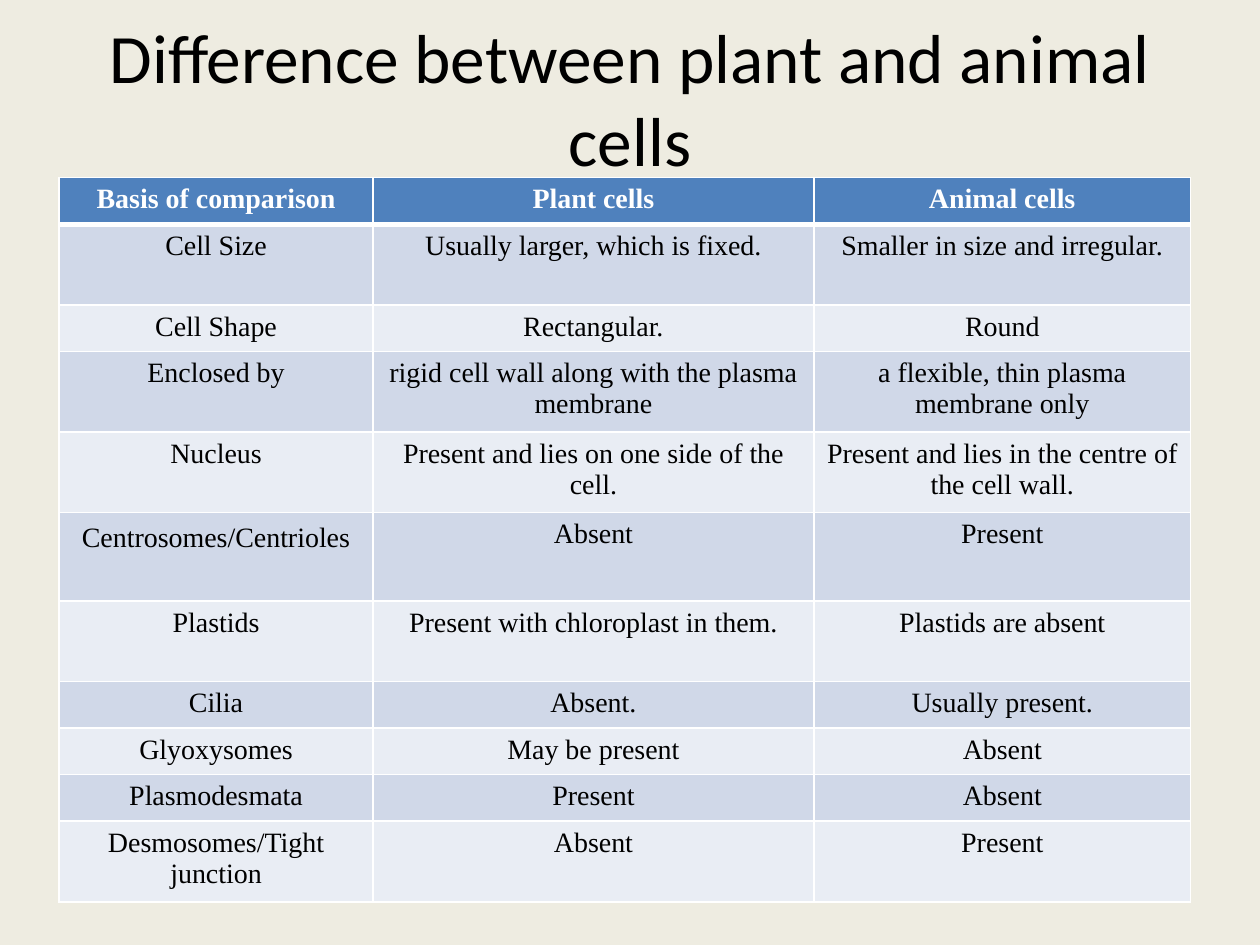
"""Build a slide that compares plant cells and animal cells in a table."""
from dataclasses import dataclass

from lxml.etree import SubElement
from pptx import Presentation
from pptx.dml.color import RGBColor as Color
from pptx.enum.text import MSO_ANCHOR as Anchor, MSO_AUTO_SIZE as AutoSize, PP_ALIGN as Align
from pptx.oxml.ns import qn
from pptx.util import Inches, Pt


@dataclass(frozen=True)
class Theme:
    background: str = "EEECE1"
    header: str = "4F81BD"
    bands: tuple = ("E9EDF4", "D0D8E8")
    white: str = "FFFFFF"
    black: str = "000000"
    title_font: str = "Calibri"
    table_font: str = "Times New Roman"
    title_size: float = 39.6
    table_size: float = 16
    border: float = 1
    header_border: float = 3


theme = Theme()


def write(frame, text, *, font, size, color, bold=False):
    para = frame.paragraphs[0]
    para.alignment = Align.CENTER
    span = para.add_run()
    span.text = text
    span.font.name = font
    span.font.size = Pt(size)
    span.font.bold = bold
    span.font.color.rgb = Color.from_string(color)


def draw_border(cell, side, width):
    properties = cell._tc.get_or_add_tcPr()
    line = SubElement(properties, qn(f"a:ln{side}"), w=str(Pt(width)))
    fill = SubElement(line, qn("a:solidFill"))
    SubElement(fill, qn("a:srgbClr"), val=theme.white)


deck = Presentation()
deck.slide_width, deck.slide_height = Inches(10), Inches(7.5)
page = deck.slides.add_slide(deck.slide_layouts[5])
page.background.fill.solid()
page.background.fill.fore_color.rgb = Color.from_string(theme.background)

title = page.shapes.title
title.left, title.top = Inches(0.5), Inches(0.3)
title.width, title.height = Inches(9), Inches(0.95)
title.text_frame.auto_size = AutoSize.NONE
title.text_frame.vertical_anchor = Anchor.MIDDLE
write(title.text_frame, "Difference between plant and animal cells",
      font=theme.title_font, size=theme.title_size, color=theme.black)

short, tall, padded = 0.37, 0.64, 0.7
rows = [
    (short, "Basis of comparison", "Plant cells", "Animal cells"),
    (tall, "Cell Size", "Usually larger, which is fixed.", "Smaller in size and irregular."),
    (short, "Cell Shape", "Rectangular.", "Round"),
    (tall, "Enclosed by", "rigid cell wall along with the plasma membrane",
     "a flexible, thin plasma membrane only"),
    (tall, "Nucleus", "Present and lies on one side of the cell.",
     "Present and lies in the centre of the cell wall."),
    (padded, "Centrosomes/Centrioles", "Absent", "Present"),
    (tall, "Plastids", "Present with chloroplast in them.", "Plastids are absent"),
    (short, "Cilia", "Absent.", "Usually present."),
    (short, "Glyoxysomes", "May be present", "Absent"),
    (short, "Plasmodesmata", "Present", "Absent"),
    (tall, "Desmosomes/Tight junction", "Absent", "Present"),
]
widths = [2.49, 3.5, 2.99]
table = page.shapes.add_table(
    len(rows), len(widths), Inches(0.47), Inches(1.41),
    Inches(sum(widths)), Inches(sum(row[0] for row in rows))).table
for column, width in zip(table.columns, widths):
    column.width = Inches(width)

for row_index, (height, *texts) in enumerate(rows):
    table.rows[row_index].height = Inches(height)
    is_header = row_index == 0
    for column_index, text in enumerate(texts):
        cell = table.cell(row_index, column_index)
        write(cell.text_frame, text, font=theme.table_font, size=theme.table_size,
              color=theme.white if is_header else theme.black, bold=is_header)
        for side in "LRTB":
            under_header = (row_index, side) in [(0, "B"), (1, "T")]
            draw_border(cell, side, theme.header_border if under_header else theme.border)
        cell.fill.solid()
        cell.fill.fore_color.rgb = Color.from_string(
            theme.header if is_header else theme.bands[row_index % 2])
        if height == padded and column_index == 0:
            cell.margin_left = cell.margin_right = Inches(0.08)
            cell.margin_top = cell.margin_bottom = Inches(0.08)

deck.save("out.pptx")
